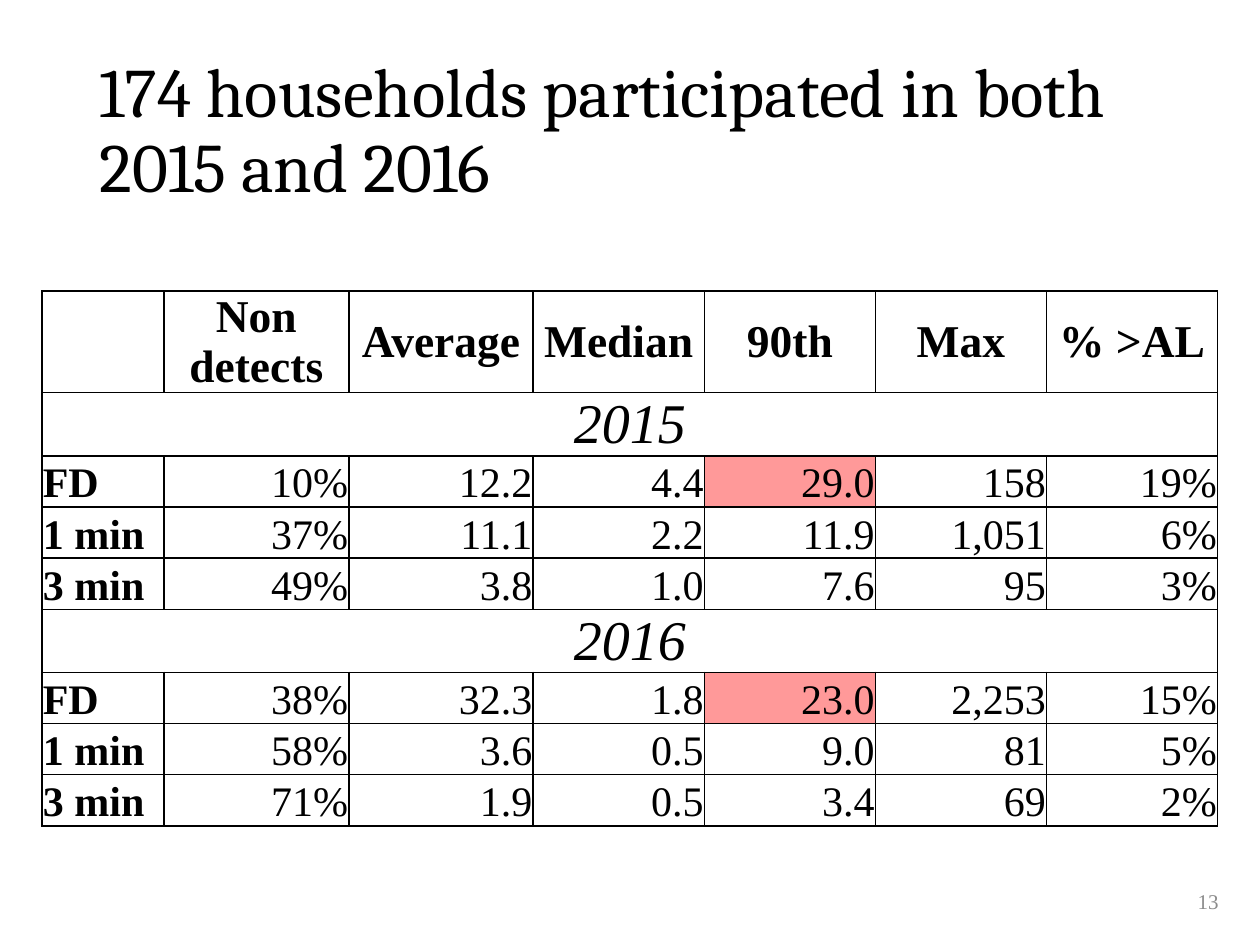
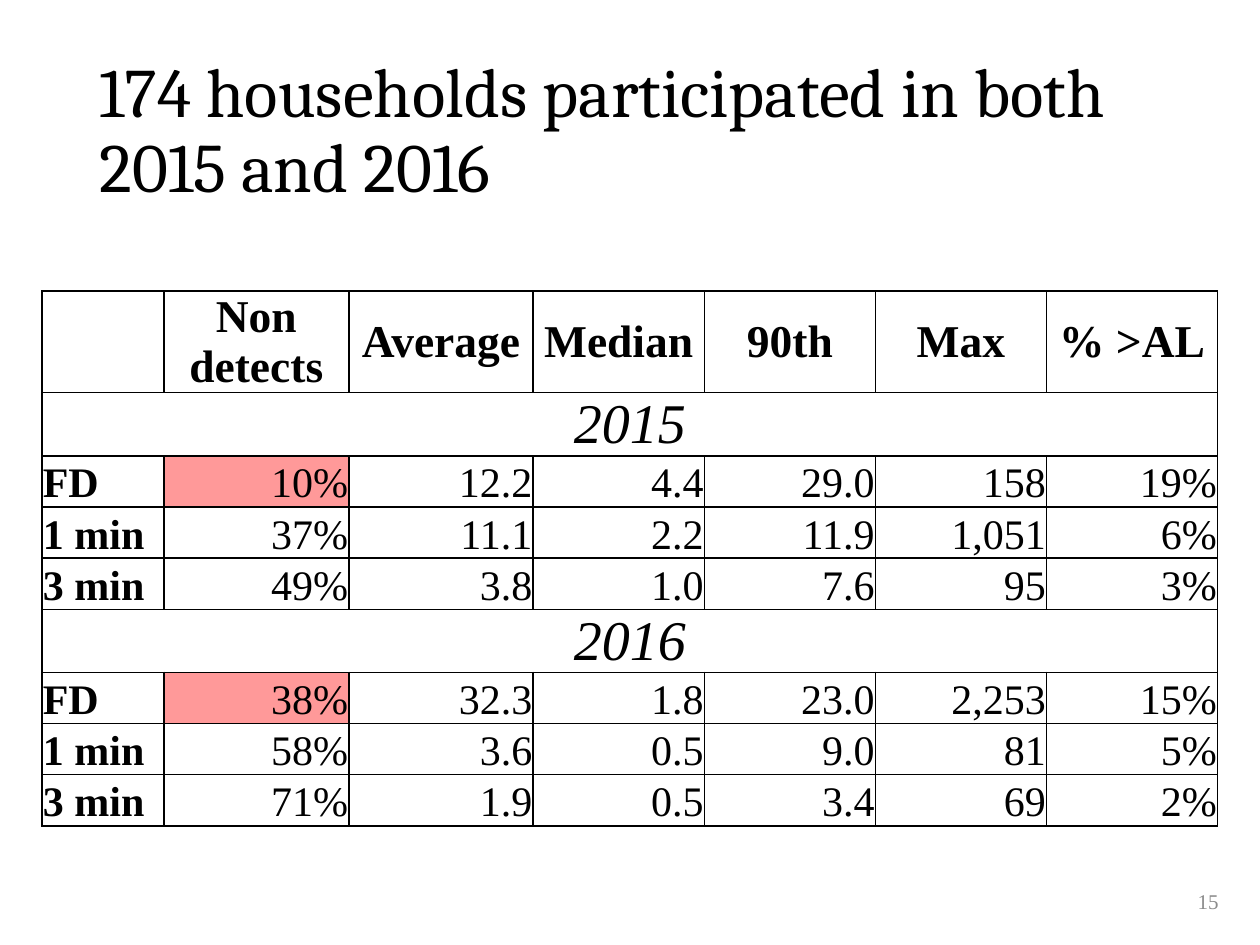
"""Build two slides that compare household water samples from 2015 and 2016."""
from dataclasses import dataclass

import lxml.etree
import pptx
import pptx.dml.color
import pptx.enum.text
import pptx.oxml.ns
import pptx.util

Pt = pptx.util.Pt
Color = pptx.dml.color.RGBColor
Align = pptx.enum.text.PP_ALIGN
Anchor = pptx.enum.text.MSO_ANCHOR
qn = pptx.oxml.ns.qn


@dataclass(frozen=True)
class Theme:
    serif: str = "Times New Roman"
    display: str = "Cambria"
    ink: str = "000000"
    gray: str = "8C8C8C"
    mark: str = "FF0000"
    alpha: int = 40
    title: float = 39.6
    head: float = 26
    year: float = 32
    body: float = 24
    foot: float = 12
    rule: float = 1


@dataclass(frozen=True)
class Box:
    left: float
    top: float
    width: float
    height: float

    def points(self) -> tuple:
        return Pt(self.left), Pt(self.top), Pt(self.width), Pt(self.height)


@dataclass(frozen=True)
class Page:
    number: int
    marked: str


@dataclass(frozen=True)
class Group:
    year: str
    rows: tuple


THEME = Theme()
TITLE = "174 households participated in both 2015 and 2016"
TITLE_BOX = Box(49.7, 28.8, 620.6, 93.6)
FOOT_BOX = Box(508.3, 500.4, 195.1, 28.8)
PAGES = (Page(13, "90th"), Page(15, "Non\ndetects"))

HEADS = ("", "Non\ndetects", "Average", "Median", "90th", "Max", "% >AL")
GROUPS = (
    Group("2015", (
        ("FD", "10%", "12.2", "4.4", "29.0", "158", "19%"),
        ("1 min", "37%", "11.1", "2.2", "11.9", "1,051", "6%"),
        ("3 min", "49%", "3.8", "1.0", "7.6", "95", "3%"),
    )),
    Group("2016", (
        ("FD", "38%", "32.3", "1.8", "23.0", "2,253", "15%"),
        ("1 min", "58%", "3.6", "0.5", "9.0", "81", "5%"),
        ("3 min", "71%", "1.9", "0.5", "3.4", "69", "2%"),
    )),
)
WIDTHS = (69.6, 105.8, 105.3) + (97.8,) * 4
HEAD_ROW, YEAR_ROW, BODY_ROW = 57.6, 36, 29.25
HEIGHTS = (HEAD_ROW,) + (YEAR_ROW, BODY_ROW, BODY_ROW, BODY_ROW) * len(GROUPS)
GRID_BOX = Box(24, 166.3, sum(WIDTHS), sum(HEIGHTS))


def write(frame, text: str, *, size: float, font: str = THEME.serif,
          color: str = THEME.ink, bold: bool = False, slant: bool = False,
          align=Align.LEFT, space: float = 1.0) -> None:
    """Fill a text frame, one paragraph a line, in a single format."""
    frame.text = text
    frame.word_wrap = True
    for para in frame.paragraphs:
        para.alignment = align
        para.line_spacing = space
        face = para.font
        face.name, face.size = font, Pt(size)
        face.bold, face.italic = bold, slant
        face.color.rgb = Color.from_string(color)


def rule_cell(cell) -> None:
    """Draw a thin line on all four sides of a cell."""
    props = cell._tc.get_or_add_tcPr()
    for spot, side in enumerate(("lnL", "lnR", "lnT", "lnB")):
        line = lxml.etree.Element(qn(f"a:{side}"), w=str(Pt(THEME.rule)))
        fill = lxml.etree.SubElement(line, qn("a:solidFill"))
        lxml.etree.SubElement(fill, qn("a:srgbClr"), val=THEME.ink)
        props.insert(spot, line)


def mark_cell(cell) -> None:
    """Tint a cell with the sheer mark color."""
    cell.fill.solid()
    cell.fill.fore_color.rgb = Color.from_string(THEME.mark)
    tint = cell._tc.tcPr.find(f"{qn('a:solidFill')}/{qn('a:srgbClr')}")
    lxml.etree.SubElement(tint, qn("a:alpha"), val=str(THEME.alpha * 1000))


def set_cell(cell, text: str, *, anchor=Anchor.BOTTOM, **style) -> None:
    """Give a cell its margins, lines and text."""
    cell.margin_left = cell.margin_right = cell.margin_top = Pt(0.5)
    cell.margin_bottom = Pt(0)
    cell.vertical_anchor = anchor
    cell.fill.background()
    rule_cell(cell)
    write(cell.text_frame, text, **style)


def add_grid(slide, marked: str) -> None:
    """Add the sample table and tint the first-draw cells of one column."""
    grid = slide.shapes.add_table(
        len(HEIGHTS), len(WIDTHS), *GRID_BOX.points()).table
    grid.first_row = grid.horz_banding = False
    for column, width in zip(grid.columns, WIDTHS):
        column.width = Pt(width)
    for row, height in zip(grid.rows, HEIGHTS):
        row.height = Pt(height)

    for col, text in enumerate(HEADS):
        set_cell(grid.cell(0, col), text, anchor=Anchor.MIDDLE,
                 size=THEME.head, bold=True, align=Align.CENTER)
    line = 1
    for group in GROUPS:
        for col in range(len(HEADS)):
            set_cell(grid.cell(line, col), "" if col else group.year,
                     size=THEME.year, slant=True, align=Align.CENTER)
        grid.cell(line, 0).merge(grid.cell(line, len(HEADS) - 1))
        for row, values in enumerate(group.rows, line + 1):
            for col, text in enumerate(values):
                set_cell(grid.cell(row, col), text, size=THEME.body,
                         bold=col == 0,
                         align=Align.RIGHT if col else Align.LEFT)
        mark_cell(grid.cell(line + 1, HEADS.index(marked)))
        line += len(group.rows) + 1


def add_page(deck, page: Page) -> None:
    """Add one slide with its title, table and page number."""
    slide = deck.slides.add_slide(deck.slide_layouts[5])
    title = slide.shapes.title
    title.left, title.top, title.width, title.height = TITLE_BOX.points()
    write(title.text_frame, TITLE, size=THEME.title, font=THEME.display,
          space=0.9)
    title.text_frame.vertical_anchor = Anchor.MIDDLE
    add_grid(slide, page.marked)
    foot = slide.shapes.add_textbox(*FOOT_BOX.points()).text_frame
    write(foot, str(page.number), size=THEME.foot, color=THEME.gray,
          align=Align.RIGHT)
    foot.vertical_anchor = Anchor.MIDDLE


def main() -> None:
    """Build and save the deck."""
    deck = pptx.Presentation()
    deck.slide_width, deck.slide_height = Pt(720), Pt(540)
    for page in PAGES:
        add_page(deck, page)
    deck.save("out.pptx")


if __name__ == "__main__":
    main()
